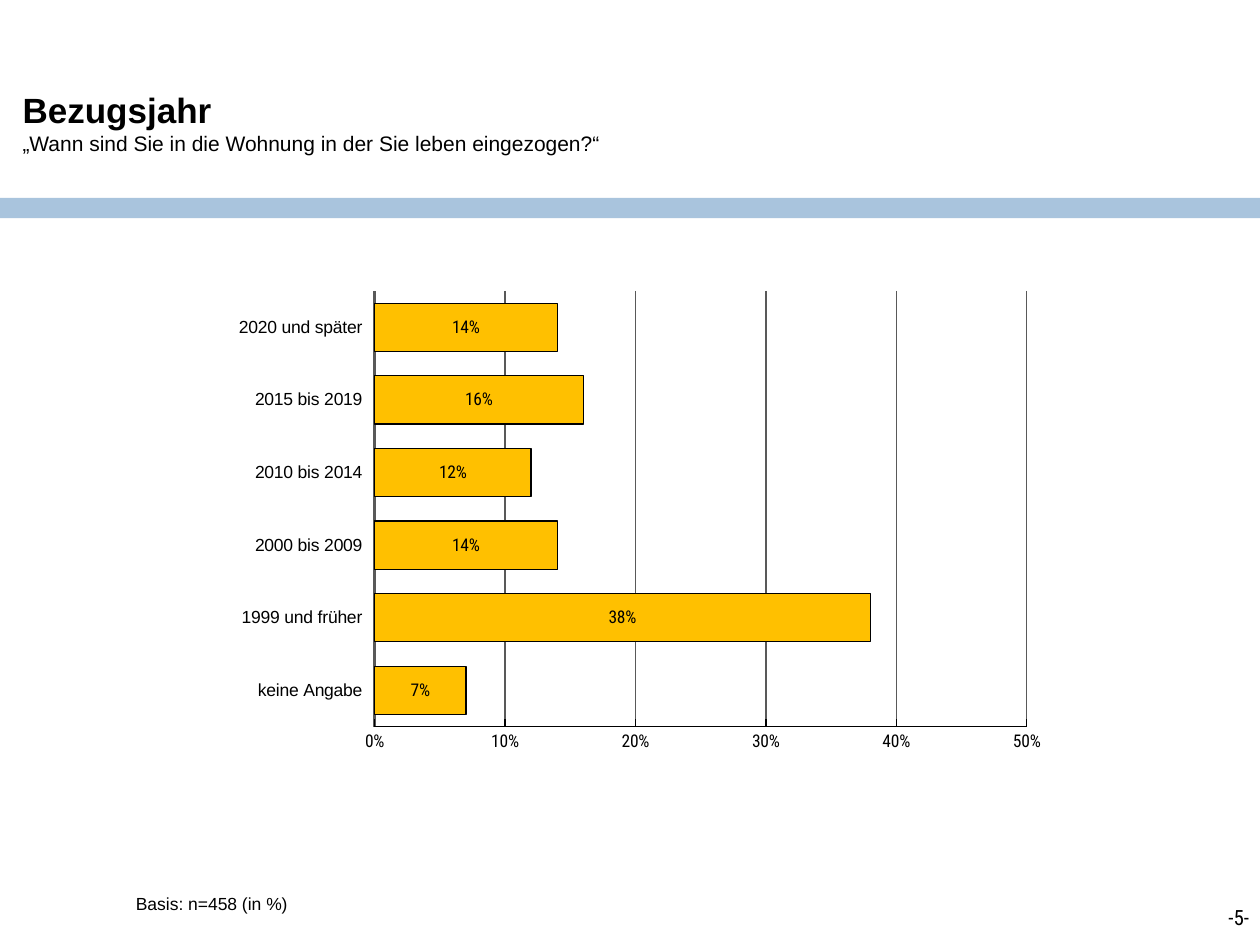
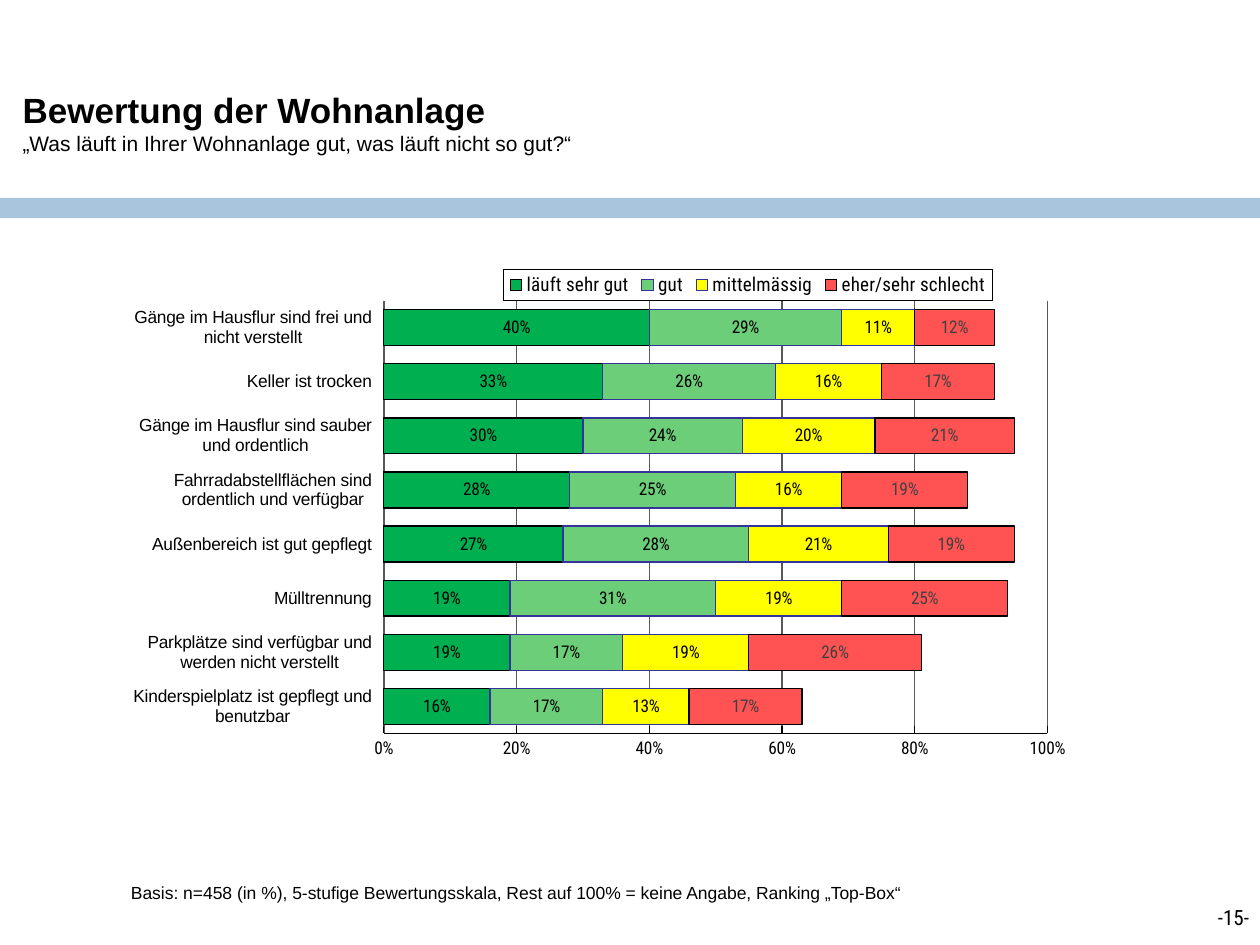
"""Build two survey slides with stacked bar charts."""
from lxml.etree import SubElement as Sub
from pptx import Presentation
from pptx.chart.data import CategoryChartData as Data
from pptx.dml.color import RGBColor
from pptx.enum.chart import XL_CHART_TYPE as Kind, XL_LABEL_POSITION as Spot
from pptx.enum.chart import XL_LEGEND_POSITION as Side, XL_TICK_LABEL_POSITION as Label
from pptx.enum.chart import XL_TICK_MARK as Tick
from pptx.enum.shapes import MSO_SHAPE as Shape
from pptx.enum.text import MSO_ANCHOR as Anchor, MSO_AUTO_SIZE as Fit, PP_ALIGN as Align
from pptx.oxml import parse_xml
from pptx.oxml.ns import nsdecls, qn
from pptx.util import Cm, Pt

BLACK, GREY, DARK, BLUE = "000000", "595959", "404040", "333399"
SANS, SLIM = "Arial", "Roboto Condensed"
BAND, BAND_AT, BAND_ALPHA = "92B5D5", (0, 3.99, 25.43, 0.41), 79
HEAD_AT, PAGE_AT = (0.2, 0.81, 23.7, 3.3), (19.51, 18.11, 5.92, 1.32)

SLIDES = [
    dict(
        head="Bezugsjahr",
        ask="„Wann sind Sie in die Wohnung in der Sie leben eingezogen?“",
        page="-5-",
        base="Basis: n=458 (in %)", base_at=(2.49, 17.88, 3.61, 0.69),
        at=(3.05, 5.03, 18.01, 10.46), plot=(0.25, 0.08, 0.73, 0.84),
        top=0.5, step=0.1, legend=None,
        cats=["keine Angabe", "1999 und früher", "2000 bis 2009",
              "2010 bis 2014", "2015 bis 2019", "2020 und später"],
        rows=[("Series 1", "FFC000", BLACK, BLACK,
               (0.07, 0.38, 0.14, 0.12, 0.16, 0.14))],
    ),
    dict(
        head="Bewertung der Wohnanlage",
        ask="„Was läuft in Ihrer Wohnanlage gut, was läuft nicht so gut?“",
        page="-15-",
        base="Basis: n=458 (in %), 5-stufige Bewertungsskala, "
             "Rest auf 100% = keine Angabe, Ranking „Top-Box“",
        base_at=(2.39, 17.65, 16.1, 0.69),
        at=(2.69, 5.23, 18.8, 10.39), plot=(0.26, 0.08, 0.72, 0.84),
        top=1, step=0.2, legend=(0.39, 0.02, 0.53, 0.06),
        cats=["Kinderspielplatz ist gepflegt und benutzbar",
              "Parkplätze sind verfügbar und werden nicht verstellt",
              "Mülltrennung",
              "Außenbereich ist gut gepflegt",
              "Fahrradabstellflächen sind ordentlich und verfügbar",
              "Gänge im Hausflur sind sauber und ordentlich",
              "Keller ist trocken",
              "Gänge im Hausflur sind frei und nicht verstellt"],
        rows=[
            ("läuft sehr gut", "00B050", BLACK, BLACK,
             (0.16, 0.19, 0.19, 0.27, 0.28, 0.3, 0.33, 0.4)),
            ("gut", "6CCE78", BLUE, BLACK,
             (0.17, 0.17, 0.31, 0.28, 0.25, 0.24, 0.26, 0.29)),
            ("mittelmässig", "FFFF00", BLUE, BLACK,
             (0.13, 0.19, 0.19, 0.21, 0.16, 0.2, 0.16, 0.11)),
            ("eher/sehr schlecht", "FF5353", BLACK, DARK,
             (0.17, 0.26, 0.25, 0.19, 0.19, 0.21, 0.17, 0.12)),
        ],
    ),
]


def apply(obj, **vals):
    """Set attributes from format values."""
    for key, val in vals.items():
        setattr(obj, key, val)


def tint(part, hue):
    """Colour a fill or font."""
    if hasattr(part, "solid"):
        part.solid()
        part.fore_color.rgb = RGBColor.from_string(hue)
    else:
        part.color.rgb = RGBColor.from_string(hue)


def style(font, size, name=SANS, hue=BLACK, bold=False):
    """Format a font."""
    apply(font, size=Pt(size), name=name, bold=bold)
    tint(font, hue)


def stroke(line, hue, width=0.75):
    """Format a line."""
    tint(line.fill, hue)
    line.width = Pt(width)


def box(at):
    """Turn centimetres into lengths."""
    return [Cm(val) for val in at]


def write(slide, text, at, size, name, align=Align.LEFT, wrap=True):
    """Add a line of text."""
    frame = slide.shapes.add_textbox(*box(at)).text_frame
    frame.word_wrap = wrap
    para = frame.paragraphs[0]
    apply(para, text=text, alignment=align)
    style(para.font, size, name)


def lay(node, index, at, inner=False):
    """Fix the place of a chart part."""
    for old in node.findall(qn("c:layout")):
        node.remove(old)
    root = parse_xml(f"<c:layout {nsdecls('c')}/>")
    spot = Sub(root, qn("c:manualLayout"))
    pairs = [("layoutTarget", "inner")] if inner else []
    pairs += [("xMode", "edge"), ("yMode", "edge"), *zip("xywh", at)]
    for key, val in pairs:
        Sub(spot, qn(f"c:{key}")).set("val", str(val))
    node.insert(index, root)


def frame_top(slide, info):
    """Add the band, title and page number."""
    band = slide.shapes.add_shape(Shape.RECTANGLE, *box(BAND_AT))
    band.shadow.inherit = False
    tint(band.fill, BAND)
    band.line.fill.background()
    hue = band.element.spPr.find(".//" + qn("a:srgbClr"))
    Sub(hue, qn("a:alpha")).set("val", str(BAND_ALPHA * 1000))

    title = slide.shapes.title
    apply(title, **dict(zip(("left", "top", "width", "height"), box(HEAD_AT))))
    apply(title.text_frame, vertical_anchor=Anchor.MIDDLE, auto_size=Fit.NONE, word_wrap=True)
    para = title.text_frame.paragraphs[0]
    para.alignment = Align.LEFT
    for key, size, bold in (("head", 20, True), ("ask", 12, False)):
        if para.runs:
            para.add_line_break()
        run = para.add_run()
        run.text = info[key]
        style(run.font, size, bold=bold)
    write(slide, info["page"], PAGE_AT, 12, SLIM, Align.RIGHT)


def set_axes(chart, info):
    """Format both axes."""
    cat, val = chart.category_axis, chart.value_axis
    apply(cat, tick_label_position=Label.LOW, major_tick_mark=Tick.NONE,
          minor_tick_mark=Tick.NONE, has_major_gridlines=False)
    apply(val, minimum_scale=0, maximum_scale=info["top"], major_unit=info["step"],
          major_tick_mark=Tick.INSIDE, minor_tick_mark=Tick.NONE, has_major_gridlines=True)
    apply(val.tick_labels, number_format="0%", number_format_is_linked=False)
    stroke(val.major_gridlines.format.line, GREY)
    for axis, name, hue, width in ((cat, SANS, GREY, 1.5), (val, SLIM, BLACK, 0.75)):
        style(axis.tick_labels.font, 10, name)
        stroke(axis.format.line, hue, width)


def set_key(chart, at):
    """Add a framed legend."""
    chart.has_legend = True
    apply(chart.legend, position=Side.TOP, include_in_layout=False)
    style(chart.legend.font, 11, SLIM)
    node = chart.element.find(".//" + qn("c:legend"))
    lay(node, 1, at)
    node.find(qn("c:txPr")).addprevious(parse_xml(
        f'<c:spPr {nsdecls("c", "a")}><a:solidFill><a:srgbClr val="FFFFFF"/></a:solidFill>'
        f'<a:ln w="9525"><a:solidFill><a:srgbClr val="{BLACK}"/></a:solidFill></a:ln></c:spPr>'))


def draw(slide, info):
    """Add the stacked bars."""
    data = Data(number_format="0%")
    data.categories = info["cats"]
    for name, *_, vals in info["rows"]:
        data.add_series(name, vals)
    chart = slide.shapes.add_chart(Kind.BAR_STACKED, *box(info["at"]), data).chart
    apply(chart, has_title=False, has_legend=False)
    style(chart.font, 10, SLIM)
    plot = chart.plots[0]
    apply(plot, gap_width=51, overlap=100, vary_by_categories=False)
    for bars, (_, fill, edge, ink, _) in zip(plot.series, info["rows"]):
        tint(bars.format.fill, fill)
        stroke(bars.format.line, edge)
        tags = bars.data_labels
        apply(tags, show_value=True, number_format="0%",
              number_format_is_linked=False, position=Spot.CENTER)
        style(tags.font, 10, SLIM, ink)
    set_axes(chart, info)
    lay(chart.element.find(".//" + qn("c:plotArea")), 0, info["plot"], True)
    if info["legend"]:
        set_key(chart, info["legend"])


def main():
    """Build and save the deck."""
    deck = Presentation()
    apply(deck, slide_width=Cm(25.4), slide_height=Cm(19.05))
    for info in SLIDES:
        slide = deck.slides.add_slide(deck.slide_layouts[5])
        frame_top(slide, info)
        write(slide, info["base"], info["base_at"], 10, SANS, wrap=False)
        draw(slide, info)
    deck.save("out.pptx")


if __name__ == "__main__":
    main()
